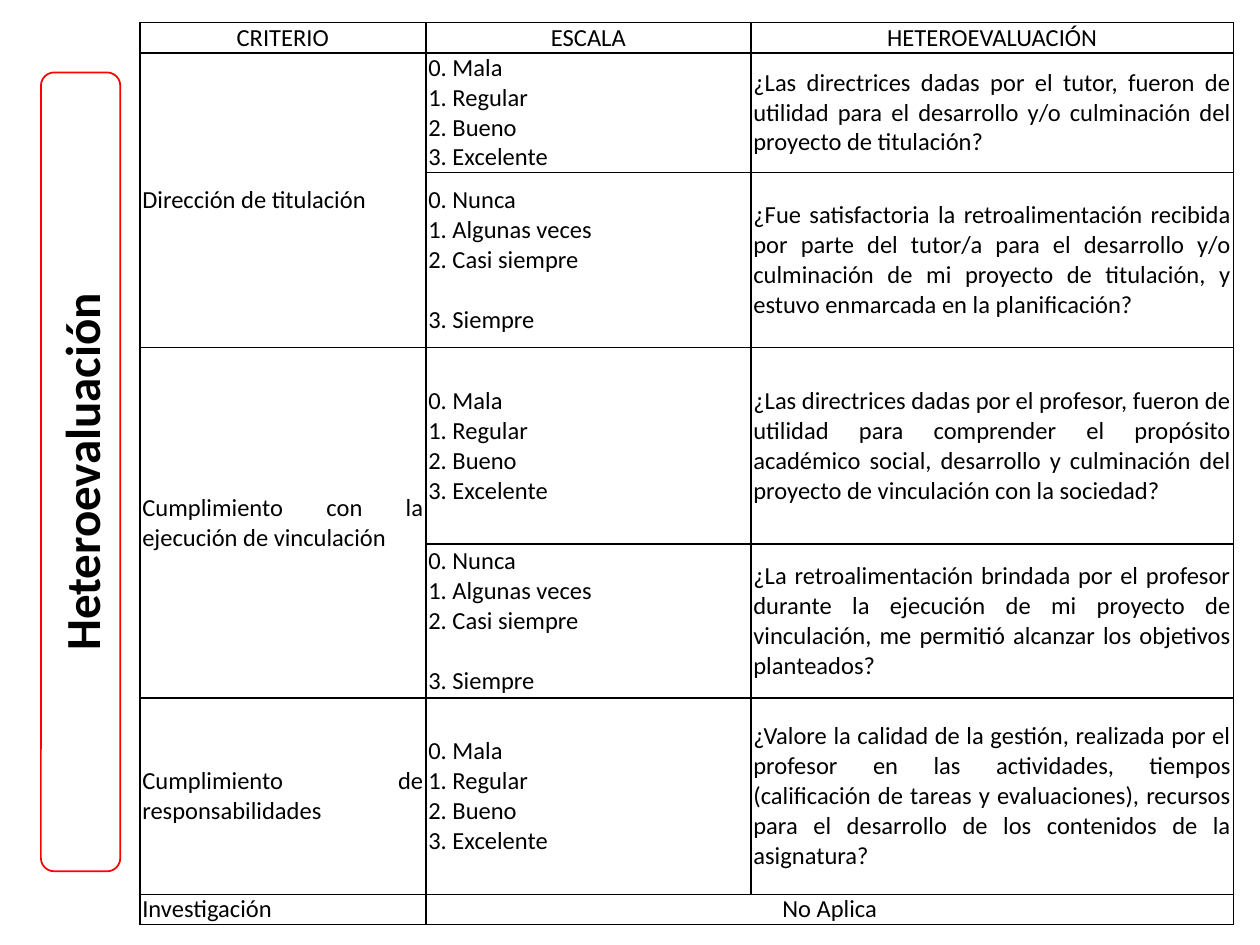
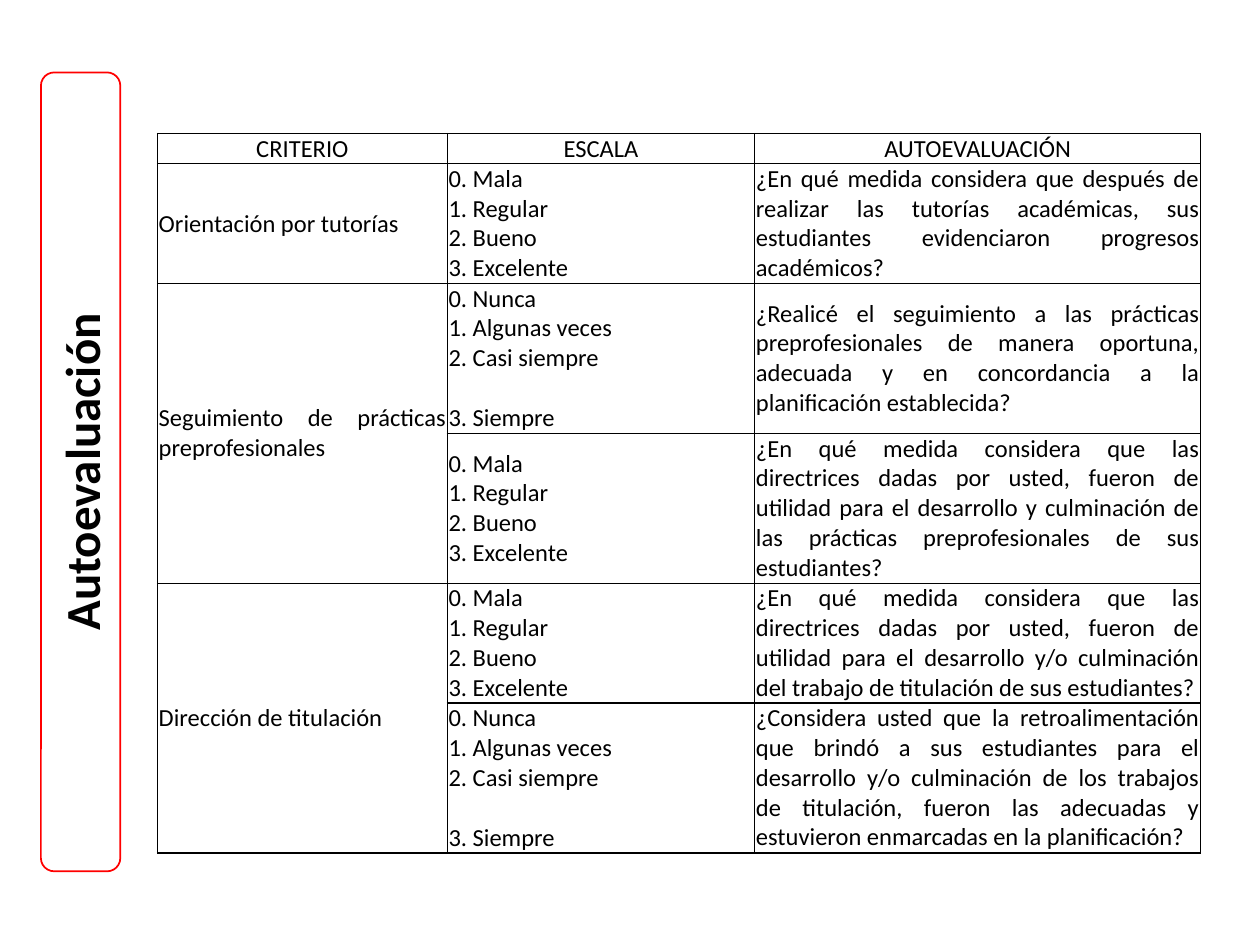
import pptx
import pptx.dml.color
import pptx.enum.shapes
import pptx.enum.text
import pptx.oxml
import pptx.oxml.ns
import pptx.util

Inches = pptx.util.Inches
ALIGN = pptx.enum.text.PP_ALIGN
MIDDLE = pptx.enum.text.MSO_ANCHOR.MIDDLE
FONT, BLACK, WHITE, RED = "Calibri", "000000", "FFFFFF", "FF0000"
LINE_HEIGHT = 17.1

QUALITY = ["0. Mala\v1. Regular\v2. Bueno\v3. Excelente"]
FREQUENCY = ["0. Nunca\v1. Algunas veces\v2. Casi siempre", "3. Siempre"]

PEER_ROWS = [
    ("Dirección de titulación", QUALITY,
     "¿Las directrices dadas por el tutor, fueron de utilidad para el desarrollo y/o "
     "culminación del proyecto de titulación?"),
    (None, FREQUENCY,
     "¿Fue satisfactoria la retroalimentación recibida por parte del tutor/a para el "
     "desarrollo y/o culminación de mi proyecto de titulación, y estuvo enmarcada en la "
     "planificación?"),
    ("Cumplimiento con la ejecución de vinculación", QUALITY,
     "¿Las directrices dadas por el profesor, fueron de utilidad para comprender el "
     "propósito académico social, desarrollo y culminación del proyecto de vinculación "
     "con la sociedad?"),
    (None, FREQUENCY,
     "¿La retroalimentación brindada por el profesor durante la ejecución de mi proyecto "
     "de vinculación, me permitió alcanzar los objetivos planteados?"),
    ("Cumplimiento de responsabilidades", QUALITY,
     "¿Valore la calidad de la gestión, realizada por el profesor en las actividades, "
     "tiempos (calificación de tareas y evaluaciones), recursos para el desarrollo de los "
     "contenidos de la asignatura?"),
    ("Investigación", ["No Aplica"], None),
]

SELF_ROWS = [
    ("Orientación por tutorías", QUALITY,
     "¿En qué medida considera que después de realizar las tutorías académicas, sus "
     "estudiantes evidenciaron progresos académicos?"),
    ("Seguimiento de prácticas preprofesionales", FREQUENCY,
     "¿Realicé el seguimiento a las prácticas preprofesionales de manera oportuna, "
     "adecuada y en concordancia a la planificación establecida?"),
    (None, QUALITY,
     "¿En qué medida considera que las directrices dadas por usted, fueron de utilidad "
     "para el desarrollo y culminación de las prácticas preprofesionales de sus "
     "estudiantes?"),
    ("Dirección de titulación", QUALITY,
     "¿En qué medida considera que las directrices dadas por usted, fueron de utilidad "
     "para el desarrollo y/o culminación del trabajo de titulación de sus estudiantes?"),
    (None, FREQUENCY,
     "¿Considera usted que la retroalimentación que brindó a sus estudiantes para el "
     "desarrollo y/o culminación de los trabajos de titulación, fueron las adecuadas y "
     "estuvieron enmarcadas en la planificación?"),
]


def color(hex_code):
    """Return the RGB colour for a hex string."""
    return pptx.dml.color.RGBColor.from_string(hex_code)


def write(frame, paragraphs, size=14, bold=False, align=ALIGN.LEFT, gap=LINE_HEIGHT):
    """Fill a text frame with paragraphs, set apart by a gap in points."""
    frame.text = "\n".join(paragraphs)
    for index, paragraph in enumerate(frame.paragraphs):
        paragraph.alignment = align
        paragraph.space_before = pptx.util.Pt(gap if index else 0)
        for font in [paragraph.font] + [run.font for run in paragraph.runs]:
            font.name, font.size, font.bold = FONT, pptx.util.Pt(size), bold
            font.color.rgb = color(BLACK)


def add_side_title(slide, title):
    """Add the vertical title band at the left of the slide."""
    shape = slide.shapes.add_shape(
        pptx.enum.shapes.MSO_SHAPE.ROUNDED_RECTANGLE,
        Inches(-2.53), Inches(3.43), Inches(6.34), Inches(0.63))
    shape.rotation = 270
    shape.shadow.inherit = False
    shape.fill.solid()
    shape.fill.fore_color.rgb = color(WHITE)
    shape.line.color.rgb = color(RED)
    shape.line.width = pptx.util.Pt(1)
    shape.text_frame.vertical_anchor = MIDDLE
    write(shape.text_frame, [title], size=28, bold=True, align=ALIGN.CENTER)


def style_cell(cell, margin):
    """Give a cell its margins, black borders and an empty fill."""
    cell.vertical_anchor = MIDDLE
    cell.margin_left = cell.margin_right = Inches(margin)
    cell.margin_top = cell.margin_bottom = 0
    properties = cell._tc.get_or_add_tcPr()
    for side in ("lnL", "lnR", "lnT", "lnB"):
        properties.append(pptx.oxml.parse_xml(
            f'<a:{side} {pptx.oxml.ns.nsdecls("a")} w="12700"><a:solidFill>'
            f'<a:srgbClr val="{BLACK}"/></a:solidFill></a:{side}>'))
    cell.fill.background()


def add_criteria_table(slide, left, top, widths, heights, heading, rows, margin):
    """Add a table of criteria, scales and questions, merging open cells."""
    table = slide.shapes.add_table(
        len(heights), len(widths), Inches(left), Inches(top),
        Inches(sum(widths)), Inches(sum(heights))).table
    table.first_row = table.horz_banding = False
    for column, width in zip(table.columns, widths):
        column.width = Inches(width)
    for row, height in zip(table.rows, heights):
        row.height = Inches(height)
    for cell in table.iter_cells():
        style_cell(cell, margin)
        write(cell.text_frame, [""])
    for index, label in enumerate(("CRITERIO", "ESCALA", heading)):
        write(table.cell(0, index).text_frame, [label], align=ALIGN.CENTER)
    for index, (criterion, scale, question) in enumerate(rows, start=1):
        criterion_cell, scale_cell, question_cell = table.rows[index].cells
        if criterion:
            write(criterion_cell.text_frame, [criterion], align=ALIGN.JUSTIFY)
        else:
            table.cell(index - 1, 0).merge(criterion_cell)
        if question:
            write(scale_cell.text_frame, scale)
            write(question_cell.text_frame, [question], align=ALIGN.JUSTIFY)
        else:
            scale_cell.merge(question_cell)
            write(scale_cell.text_frame, scale, align=ALIGN.CENTER)


def add_evaluation_slide(presentation, title, **table_options):
    """Add a slide with its side title and criteria table."""
    slide = presentation.slides.add_slide(presentation.slide_layouts[6])
    slide.background.fill.solid()
    slide.background.fill.fore_color.rgb = color(WHITE)
    add_side_title(slide, title)
    add_criteria_table(slide, heading=title.upper(), **table_options)


def main():
    """Build and save the presentation."""
    presentation = pptx.Presentation()
    presentation.slide_width, presentation.slide_height = Inches(10), Inches(7.5)
    add_evaluation_slide(
        presentation, "Heteroevaluación", left=1.11, top=0.18, margin=0.02,
        widths=[2.27, 2.58, 3.83], heights=[0.24, 0.95, 1.39, 1.56, 1.22, 1.56, 0.24],
        rows=PEER_ROWS)
    add_evaluation_slide(
        presentation, "Autoevaluación", left=1.25, top=1.06, margin=0.01,
        widths=[2.3, 2.44, 3.54], heights=[0.24, 0.95, 1.19, 1.19, 0.95, 1.19],
        rows=SELF_ROWS)
    presentation.save("out.pptx")


if __name__ == "__main__":
    main()
